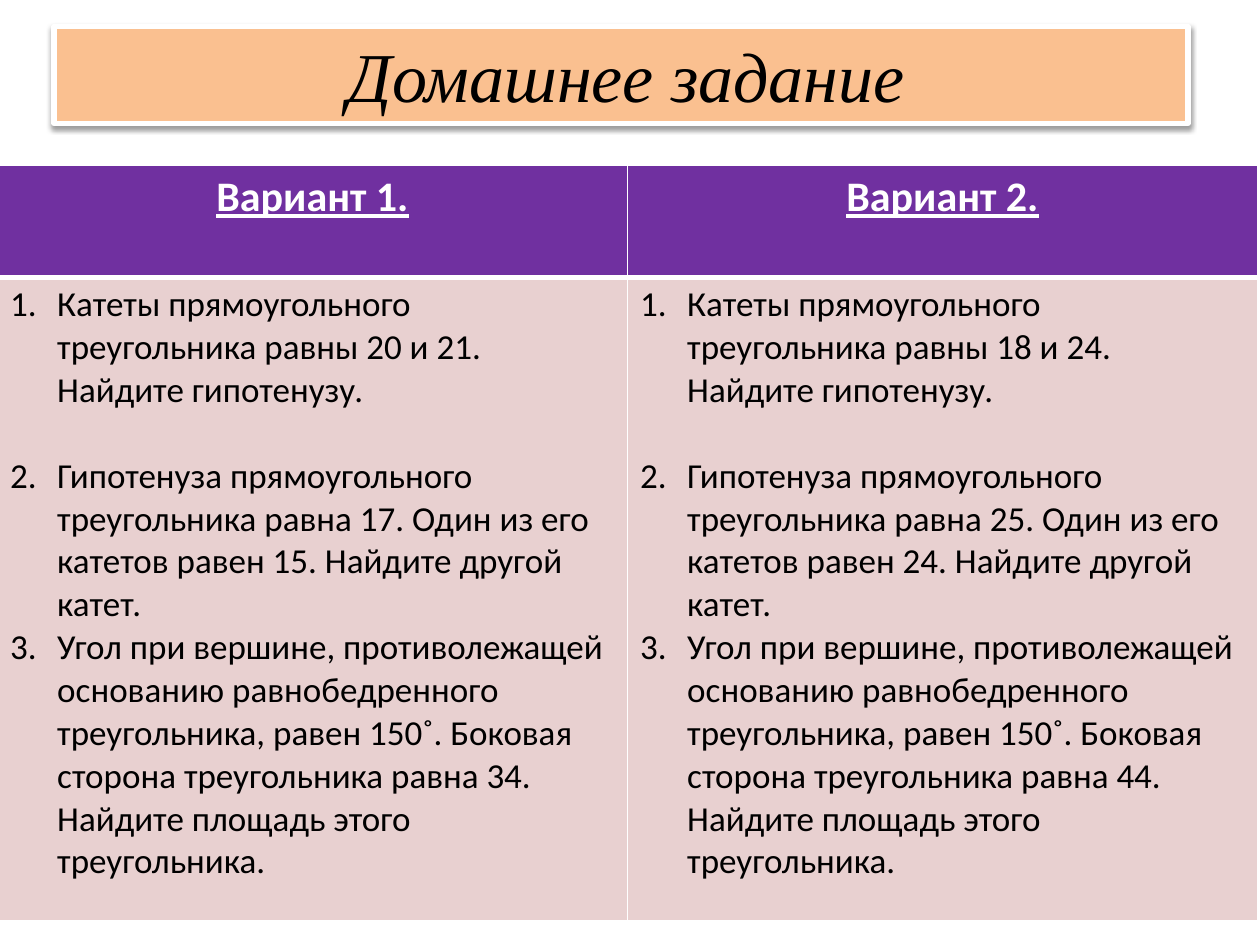
from lxml.etree import SubElement
from pptx import Presentation
from pptx.dml.color import RGBColor
from pptx.enum.shapes import MSO_SHAPE as Shape
from pptx.enum.text import MSO_ANCHOR as Anchor, PP_ALIGN as Align
from pptx.oxml import parse_xml
from pptx.oxml.ns import nsdecls, qn
from pptx.util import Cm, Pt

# Content
TITLE = "Домашнее задание"
TASKS = (
    "Катеты прямоугольного треугольника равны {} и {}. Найдите гипотенузу.",
    "Гипотенуза прямоугольного треугольника равна {}. Один из его катетов "
    "равен {}. Найдите другой катет.",
    "Угол при вершине, противолежащей основанию равнобедренного треугольника, "
    "равен 150˚. Боковая сторона треугольника равна {}. "
    "Найдите площадь этого треугольника.",
)
VARIANTS = (
    ("Вариант 1.", ((20, 21), (17, 15), (34,))),
    ("Вариант 2.", ((18, 24), (25, 24), (44,))),
)
GAPS = (0, 24.4, 0)  # points before each task

# Layout in centimetres
COLUMN_WIDTH = 12.7
ROW_HEIGHTS = (2.26, 12.98)
INDENT = 0.95

PEACH, PURPLE, PINK = "FAC090", "7030A0", "E8D0D0"
WHITE, BLACK = "FFFFFF", "000000"


def color(value):
    return RGBColor.from_string(value)


def add_text(para, text, size, ink, name="Calibri", **style):
    span = para.add_run()
    span.text = text
    span.font.size, span.font.name = Pt(size), name
    span.font.color.rgb = color(ink)
    for key, value in style.items():
        setattr(span.font, key, value)


def set_cell(cell, fill, top, bottom):
    cell.fill.solid()
    cell.fill.fore_color.rgb = color(fill)
    properties = cell._tc.get_or_add_tcPr()
    edges = {"L": 1, "R": 1, "T": top, "B": bottom}
    for position, (side, width) in enumerate(edges.items()):
        properties.insert(position, parse_xml(
            f'<a:ln{side} {nsdecls("a")} w="{Pt(width)}"><a:solidFill>'
            f'<a:srgbClr val="{WHITE}"/></a:solidFill></a:ln{side}>'))


def number_paragraph(para):
    properties = para._p.get_or_add_pPr()
    properties.set("marL", str(Cm(INDENT)))
    properties.set("indent", str(-Cm(INDENT)))
    SubElement(properties, qn("a:buFont"), typeface="+mj-lt")
    SubElement(properties, qn("a:buAutoNum"), type="arabicPeriod")


deck = Presentation()
deck.slide_width, deck.slide_height = Cm(25.4), Cm(19.05)
page = deck.slides.add_slide(deck.slide_layouts[6])

# Title banner with a soft shadow below
banner = page.shapes.add_shape(Shape.RECTANGLE, Cm(1.09), Cm(0.53), Cm(22.86), Cm(1.96))
banner.fill.solid()
banner.fill.fore_color.rgb = color(PEACH)
banner.line.color.rgb = color(WHITE)
banner.line.width = Pt(3)
banner.shadow.inherit = False
effects = banner._element.spPr.find(qn("a:effectLst"))
effects.append(parse_xml(
    f'<a:outerShdw {nsdecls("a")} blurRad="{Pt(3.1)}" dist="{Pt(1.6)}" dir="5400000" '
    f'rotWithShape="0"><a:srgbClr val="{BLACK}"><a:alpha val="38000"/></a:srgbClr>'
    '</a:outerShdw>'))
frame = banner.text_frame
frame.word_wrap = True
frame.vertical_anchor = Anchor.MIDDLE
frame.margin_left = Cm(0.46)
para = frame.paragraphs[0]
para.alignment = Align.CENTER
add_text(para, TITLE, 40, BLACK, "Times New Roman", italic=True, bold=False)

# Table of variants
table = page.shapes.add_table(
    len(ROW_HEIGHTS), len(VARIANTS), Cm(-0.05), Cm(3.33),
    Cm(COLUMN_WIDTH * len(VARIANTS)), Cm(sum(ROW_HEIGHTS))).table
for row, height in zip(table.rows, ROW_HEIGHTS):
    row.height = Cm(height)

for column, (heading, values) in enumerate(VARIANTS):
    table.columns[column].width = Cm(COLUMN_WIDTH)
    head, body = table.cell(0, column), table.cell(1, column)
    set_cell(head, PURPLE, top=1, bottom=3)
    set_cell(body, PINK, top=3, bottom=1)

    para = head.text_frame.paragraphs[0]
    para.alignment = Align.CENTER
    add_text(para, heading, 24, WHITE, bold=True, underline=True)

    for index, (task, numbers, gap) in enumerate(zip(TASKS, values, GAPS)):
        frame = body.text_frame
        para = frame.add_paragraph() if index else frame.paragraphs[0]
        if gap:
            para.space_before = Pt(gap)
        number_paragraph(para)
        add_text(para, task.format(*numbers), 20, BLACK, bold=False)

deck.save("out.pptx")
